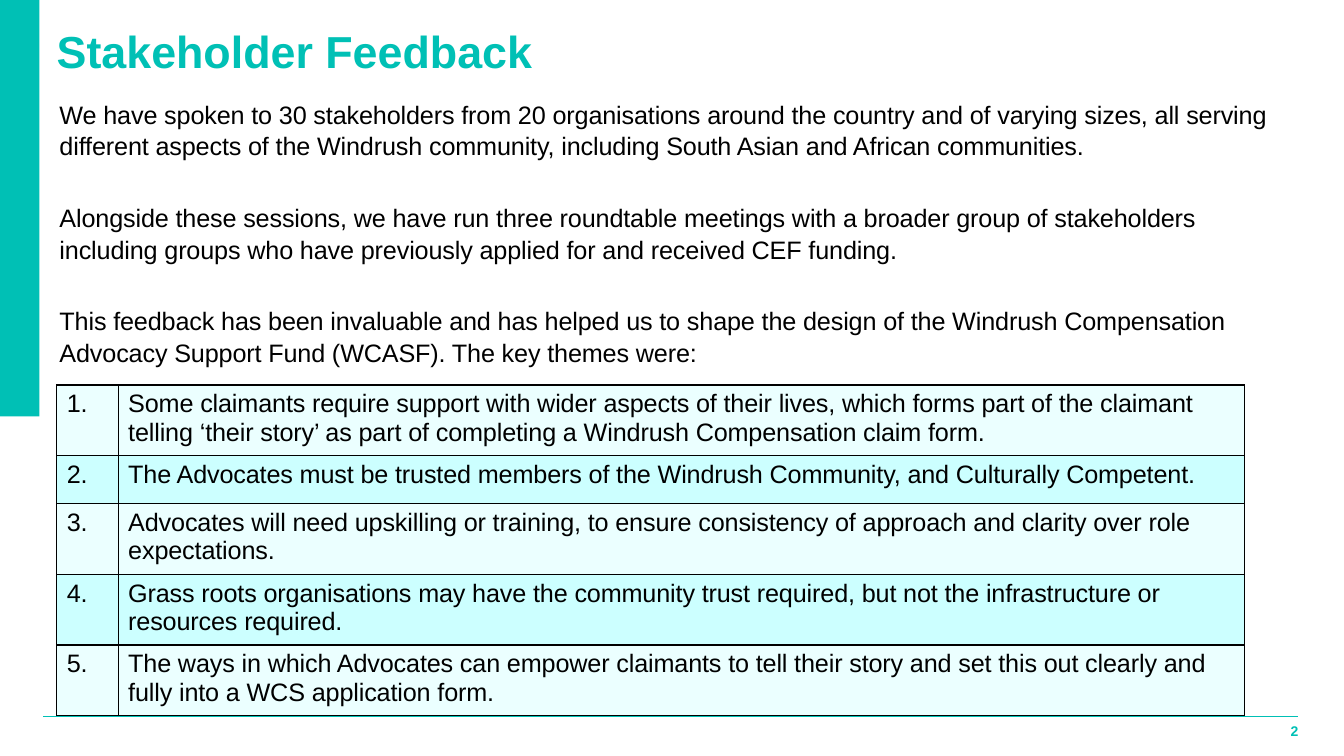
from dataclasses import dataclass

from lxml import etree
from pptx import Presentation
from pptx.dml.color import RGBColor
from pptx.enum.shapes import MSO_CONNECTOR, MSO_SHAPE
from pptx.enum.text import PP_ALIGN
from pptx.oxml.ns import qn
from pptx.util import Pt

RECTANGLE = MSO_SHAPE.RECTANGLE
STRAIGHT = MSO_CONNECTOR.STRAIGHT
LEFT, RIGHT = PP_ALIGN.LEFT, PP_ALIGN.RIGHT


@dataclass(frozen=True)
class Theme:
    font: str = "Arial"
    accent: str = "00C0B5"
    ink: str = "000000"
    bands: tuple = ("EBFFFF", "CCFFFF")
    title_size: float = 32
    body_size: float = 18
    number_size: float = 10
    tracking: int = -10  # hundredths of a point


THEME = Theme()

INTRO = (
    "We have spoken to 30 stakeholders from 20 organisations around the country and of varying sizes, "
    "all serving different aspects of the Windrush community, including South Asian and African communities.",
    "Alongside these sessions, we have run three roundtable meetings with a broader group of stakeholders "
    "including groups who have previously applied for and received CEF funding.",
    "This feedback has been invaluable and has helped us to shape the design of the Windrush Compensation "
    "Advocacy Support Fund (WCASF). The key themes were:",
)
KEY_THEMES = (
    "Some claimants require support with wider aspects of their lives, which forms part of the claimant "
    "telling ‘their story’ as part of completing a Windrush Compensation claim form.",
    "The Advocates must be trusted members of the Windrush Community, and Culturally Competent.",
    "Advocates will need upskilling or training, to ensure consistency of approach and clarity over role "
    "expectations.",
    "Grass roots organisations may have the community trust required, but not the infrastructure or "
    "resources required.",
    "The ways in which Advocates can empower claimants to tell their story and set this out clearly and "
    "fully into a WCS application form.",
)
ROW_HEIGHTS = (47.5, 34.5, 47.5, 47.5, 47.5)
NUMBER_WIDTH = 43.9


def style(para, size, color, bold=False, align=LEFT, spacing=1.0):
    para.alignment = align
    para.line_spacing = spacing
    para.font.name = THEME.font
    para.font.size = Pt(size)
    para.font.bold = bold
    para.font.color.rgb = RGBColor.from_string(color)


def tighten(element):
    for props in element.iter(qn("a:defRPr")):
        props.set("spc", str(THEME.tracking))


def add_text(page, area, lines, size, color, gap=0, **look):
    box = page.shapes.add_textbox(*map(Pt, area))
    frame = box.text_frame
    frame.word_wrap = True
    frame.margin_left = frame.margin_right = frame.margin_top = frame.margin_bottom = 0
    for index, line in enumerate(lines):
        para = frame.add_paragraph() if index else frame.paragraphs[0]
        para.text = line
        para.space_before = Pt(gap if index else 0)
        style(para, size, color, **look)
    return box


def add_side_bar(page, area):
    bar = page.shapes.add_shape(RECTANGLE, *map(Pt, area))
    bar.shadow.inherit = False
    bar.fill.solid()
    bar.fill.fore_color.rgb = RGBColor.from_string(THEME.accent)
    bar.line.fill.background()


def add_footer(page, area, number):
    left, top, width, height = area
    rule = page.shapes.add_connector(STRAIGHT, Pt(left), Pt(top), Pt(left + width), Pt(top))
    rule.line.color.rgb = RGBColor.from_string(THEME.accent)
    rule.line.width = Pt(0.75)
    etree.SubElement(rule.element.spPr, qn("a:effectLst"))
    number_width, offset = 53.3, 3
    add_text(page, (left + width - number_width, top + offset, number_width, height - offset),
             [number], THEME.number_size, THEME.accent, bold=True, align=RIGHT, spacing=1.1)


def add_borders(cell):
    props = cell._tc.get_or_add_tcPr()
    for index, side in enumerate(("lnL", "lnR", "lnT", "lnB")):
        edge = etree.Element(qn(f"a:{side}"), w=str(Pt(1)))
        fill = etree.SubElement(edge, qn("a:solidFill"))
        etree.SubElement(fill, qn("a:srgbClr"), val=THEME.ink)
        props.insert(index, edge)


def add_themes_table(page, area):
    frame = page.shapes.add_table(len(KEY_THEMES), 2, *map(Pt, area))
    table = frame.table
    table.first_row = table.horz_banding = False
    table.columns[0].width = Pt(NUMBER_WIDTH)
    table.columns[1].width = Pt(area[2] - NUMBER_WIDTH)
    for index, (theme_text, height) in enumerate(zip(KEY_THEMES, ROW_HEIGHTS)):
        table.rows[index].height = Pt(height)
        for column, text in enumerate((f"{index + 1}.", theme_text)):
            cell = table.cell(index, column)
            cell.text = text
            style(cell.text_frame.paragraphs[0], THEME.body_size, THEME.ink)
            cell.fill.solid()
            cell.fill.fore_color.rgb = RGBColor.from_string(THEME.bands[index % 2])
            add_borders(cell)
    tighten(frame.element)


def build_feedback_slide(page):
    # Frame of the page
    add_side_bar(page, (0, 0, 28.2, 297.4))
    add_footer(page, (31, 511.9, 896.4, 15), "2")

    # Heading and introduction
    add_text(page, (40.5, 13, 884, 42), ["Stakeholder Feedback"],
             THEME.title_size, THEME.accent, bold=True, spacing=1.1)
    intro = add_text(page, (42.5, 69.5, 882, 190), INTRO,
                     THEME.body_size, THEME.ink, gap=28.5, spacing=1.05)
    tighten(intro.element)

    # Key themes
    add_themes_table(page, (40.5, 275, 848.5, sum(ROW_HEIGHTS)))


def main():
    deck = Presentation()
    deck.slide_width, deck.slide_height = Pt(960), Pt(540)
    build_feedback_slide(deck.slides.add_slide(deck.slide_layouts[6]))
    deck.save("out.pptx")


if __name__ == "__main__":
    main()
